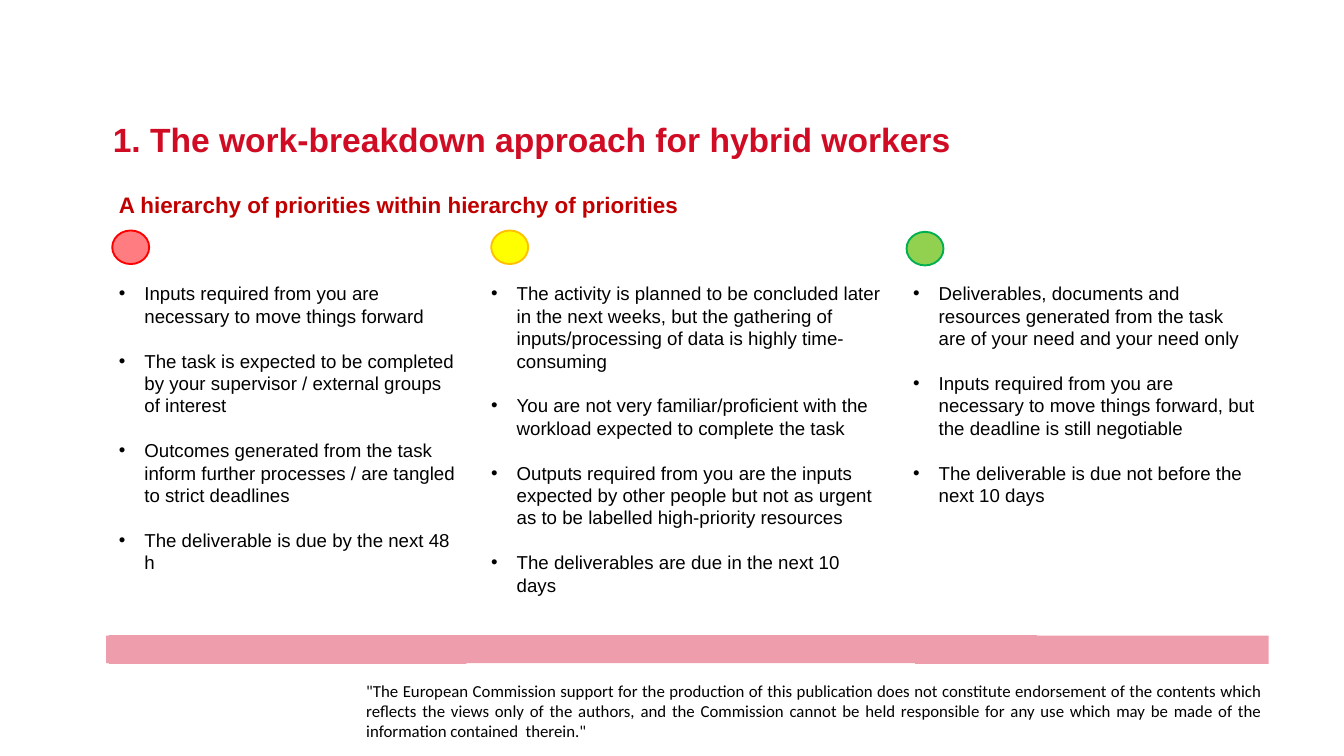
"""Build the slide on a hierarchy of priorities for hybrid workers."""
import pptx
import pptx.dml.color
import pptx.enum.shapes
import pptx.enum.text
import pptx.oxml
import pptx.oxml.ns
import pptx.util

PX = 9144
COLORS = {
    "title": "D00B24", "subtitle": "C00000", "text": "000000", "band": "ED9DAB",
    "red": "FF7C80", "red_line": "FF0000",
    "yellow": "FFFF00", "yellow_line": "FFC000",
    "green": "92D050", "green_line": "00B050",
}
FORMATS = {
    "title": {"name": "Arial", "size": pptx.util.Pt(36), "bold": True},
    "subtitle": {"name": "Arial", "size": pptx.util.Pt(24), "bold": True},
    "body": {"name": "Arial", "size": pptx.util.Pt(20)},
    "note": {"name": "Calibri", "size": pptx.util.Pt(18)},
}
BAND = [
    (1888, 946), (1543, 946), (1543, 945), (162, 945), (162, 946), (158, 946), (158, 987),
    (162, 987), (162, 988), (694, 988), (694, 987), (1362, 987), (1362, 988), (1888, 988),
]
COLUMNS = [
    ("red", (167, 343), (167, 315, 529, 616), [
        "Inputs required from you are necessary to move things forward",
        "The task is expected to be completed by your supervisor / external groups of interest",
        "Outcomes generated from the task inform further processes / are tangled to strict deadlines",
        "The deliverable is due by the next 48 h",
    ]),
    ("yellow", (731, 343), (721, 315, 601, 616), [
        "The activity is planned to be concluded later in the next weeks, but the gathering of "
        "inputs/processing of data is highly time-consuming",
        "You are not very familiar/proficient with the workload expected to complete the task",
        "Outputs required from you are the inputs expected by other people but not as urgent "
        "as to be labelled high-priority resources",
        "The deliverables are due in the next 10 days",
    ]),
    ("green", (1349, 345), (1349, 315, 529, 448), [
        "Deliverables, documents and resources generated from the task are of your need "
        "and your need only",
        "Inputs required from you are necessary to move things forward, but the deadline "
        "is still negotiable",
        "The deliverable is due not before the next 10 days",
    ]),
]
NOTE = (
    '"The European Commission support for the production of this publication does not '
    "constitute endorsement of the contents which reflects the views only of the authors, "
    "and the Commission cannot be held responsible for any use which may be made of the "
    'information contained  therein."'
)


def rgb(name):
    return pptx.dml.color.RGBColor.from_string(COLORS[name])


class Painter:
    def __init__(self, slide):
        self.shapes = slide.shapes

    def paint(self, sp, fill, line=None):
        sp.shadow.inherit = False
        sp.fill.solid()
        sp.fill.fore_color.rgb = rgb(fill)
        if line:
            sp.line.color.rgb = rgb(line)
            sp.line.width = pptx.util.Pt(2)
        else:
            sp.line.fill.background()

    def outline(self, points, fill):
        builder = self.shapes.build_freeform(*points[0], scale=PX)
        builder.add_line_segments(points[1:], close=True)
        self.paint(builder.convert_to_shape(), fill)

    def light(self, x, y, color):
        box = [v * PX for v in (x, y, 55, 50)]
        sp = self.shapes.add_shape(pptx.enum.shapes.MSO_SHAPE.OVAL, *box)
        self.paint(sp, color, f"{color}_line")

    def text(self, box, texts, style, color="text", insets=(10, 5, 10, 5), para=None, bullets=False):
        tf = self.shapes.add_textbox(*[v * PX for v in box]).text_frame
        tf.word_wrap = True
        for side, inset in zip(("left", "top", "right", "bottom"), insets):
            setattr(tf, f"margin_{side}", inset * PX)
        for i, text in enumerate(texts):
            p = tf.add_paragraph() if i else tf.paragraphs[0]
            for key, value in (para or {}).items():
                setattr(p, key, value)
            if bullets:
                self.bullet(p)
                p.space_before = pptx.util.Pt(24 if i else 0)
            r = p.add_run()
            r.text = text
            for key, value in FORMATS[style].items():
                setattr(r.font, key, value)
            r.font.color.rgb = rgb(color)

    def bullet(self, p):
        ns = pptx.oxml.ns.nsdecls("a")
        pPr = p._p.get_or_add_pPr()
        pPr.set("marL", str(38 * PX))
        pPr.set("indent", str(-38 * PX))
        for xml in (
            f'<a:buClr {ns}><a:srgbClr val="{COLORS["text"]}"/></a:buClr>',
            f'<a:buFont {ns} typeface="Arial"/>',
            f'<a:buChar {ns} char="•"/>',
        ):
            pPr.append(pptx.oxml.parse_xml(xml))


def main():
    prs = pptx.Presentation()
    prs.slide_width, prs.slide_height = 2000 * PX, 1125 * PX
    s = Painter(prs.slides.add_slide(prs.slide_layouts[6]))

    s.outline(BAND, "band")
    s.text((545, 1015, 1333, 76), [NOTE], "note", insets=(0, 0, 0, 0),
           para={"alignment": pptx.enum.text.PP_ALIGN.JUSTIFY, "line_spacing": 0.98})
    s.text((158, 172, 1513, 71), ["1. The work-breakdown approach for hybrid workers"],
           "title", "title")
    s.text((167, 280, 1711, 50), ["A hierarchy of priorities within hierarchy of priorities"],
           "subtitle", "subtitle")
    for color, spot, box, items in COLUMNS:
        s.text(box, items, "body", insets=(10, 105, 10, 5), bullets=True)
        s.light(*spot, color)

    prs.save("out.pptx")


if __name__ == "__main__":
    main()
